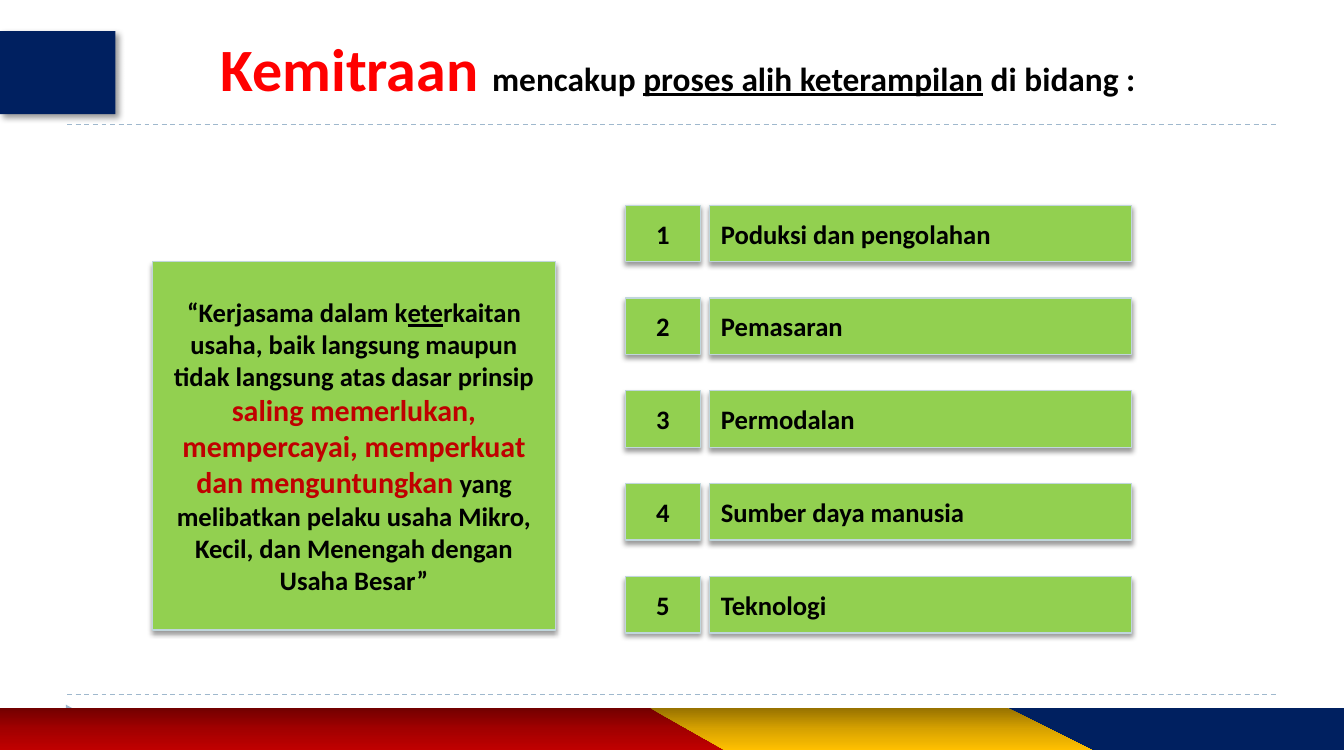
from lxml.etree import SubElement
from pptx import Presentation
from pptx.dml.color import RGBColor
from pptx.enum.dml import MSO_LINE_DASH_STYLE as Dash
from pptx.enum.shapes import MSO_CONNECTOR as Connector, MSO_SHAPE as Shape
from pptx.enum.text import MSO_ANCHOR as Anchor, MSO_AUTO_SIZE as AutoSize, PP_ALIGN as Align
from pptx.oxml.ns import qn
from pptx.util import Pt

WIDTH, HEIGHT = 806.4, 450
NAVY, GREEN, DARK_RED = "002060", "92D050", "C00000"
RED_BLEND = [(0, "720000"), (50, "A20000"), (100, "C00000")]
GOLD_BLEND = [(0, "977200"), (50, "D7A200"), (100, "FFC000")]
SKILLS = ["Poduksi dan pengolahan", "Pemasaran", "Permodalan",
          "Sumber daya manusia", "Teknologi"]


def color(value):
    return RGBColor.from_string(value)


def add_span(para, text, size=16, ink="000000", bold=True, underline=False):
    span = para.add_run()
    span.text = text
    span.font.name = "Calibri"
    span.font.size = Pt(size)
    span.font.bold = bold
    span.font.underline = underline
    span.font.color.rgb = color(ink)


def add_shadow(shape, blur, distance, angle):
    shape.shadow.inherit = False
    effects = shape.element.spPr.find(qn("a:effectLst"))
    shadow = SubElement(effects, qn("a:outerShdw"), blurRad=str(Pt(blur)),
                        dist=str(Pt(distance)), dir=str(angle * 60000),
                        algn="ctr", rotWithShape="0")
    black = SubElement(shadow, qn("a:srgbClr"), val="000000")
    SubElement(black, qn("a:alpha"), val="40000")


def paint(shape, fill, outline=None):
    shape.shadow.inherit = False
    shape.fill.solid()
    shape.fill.fore_color.rgb = color(fill)
    if outline:
        shape.line.color.rgb = color(outline)
        shape.line.width = Pt(0.75)
    else:
        shape.line.fill.background()


def paint_blend(shape, stops):
    shape.fill.gradient()
    shape.fill.gradient_angle = 270
    stop_list = shape.element.spPr.find(qn("a:gradFill")).find(qn("a:gsLst"))
    for stop in list(stop_list):
        stop_list.remove(stop)
    for position, value in stops:
        stop = SubElement(stop_list, qn("a:gs"), pos=str(position * 1000))
        SubElement(stop, qn("a:srgbClr"), val=value)


def add_box(page, left, top, width, height, spans, align=Align.LEFT):
    box = page.shapes.add_shape(Shape.RECTANGLE, Pt(left), Pt(top), Pt(width), Pt(height))
    paint(box, GREEN, "C0D6DC")
    add_shadow(box, 3, 2, 90)
    frame = box.text_frame
    frame.word_wrap = True
    frame.vertical_anchor = Anchor.MIDDLE
    para = frame.paragraphs[0]
    para.alignment = align
    for text, options in spans:
        add_span(para, text, **options)


def add_rule(page, left, top, width):
    rule = page.shapes.add_connector(Connector.STRAIGHT, Pt(left), Pt(top),
                                     Pt(left + width), Pt(top))
    rule.line.color.rgb = color("9FB8CD")
    rule.line.width = Pt(0.75)
    rule.line.dash_style = Dash.DASH
    SubElement(rule.element.spPr, qn("a:effectLst"))


def add_band(page, points):
    corners = [(Pt(x), Pt(y)) for x, y in points]
    builder = page.shapes.build_freeform(*corners[0])
    builder.add_line_segments(corners[1:], close=True)
    band = builder.convert_to_shape()
    paint(band, NAVY)
    return band


def add_footer(page, top, height):
    bottom = top + height
    marker = page.shapes.add_shape(Shape.ISOSCELES_TRIANGLE, Pt(39), Pt(top - 1.5),
                                   Pt(12), Pt(11))
    marker.rotation = 90
    paint(marker, "9FB8CD")
    add_band(page, [(604.8, top), (WIDTH, top), (WIDTH, bottom), (655.2, bottom)])
    red = add_band(page, [(0, top), (393.1, top), (434.9, bottom), (0, bottom)])
    paint_blend(red, RED_BLEND)
    gold = add_band(page, [(390.2, top), (604.8, top), (655.2, bottom), (434.9, bottom)])
    paint_blend(gold, GOLD_BLEND)


def add_header(page, left, top, width, height):
    tab = page.shapes.add_shape(Shape.RECTANGLE, 0, Pt(top + 3.6), Pt(69.2), Pt(49.8))
    paint(tab, NAVY)
    add_shadow(tab, 4, 3, 45)
    title = page.shapes.title
    title.left, title.top = Pt(left), Pt(top)
    title.width, title.height = Pt(width), Pt(height)
    frame = title.text_frame
    frame.word_wrap = True
    frame.auto_size = AutoSize.NONE
    frame.vertical_anchor = Anchor.TOP
    para = frame.paragraphs[0]
    para.alignment = Align.LEFT
    add_span(para, "Kemitraan ", size=36, ink="FF0000")
    add_span(para, "mencakup ", size=20)
    add_span(para, "proses alih keterampilan", size=20, underline=True)
    add_span(para, " di bidang :", size=20)


def add_definition(page, left, top, width, height):
    spans = [
        ("“Kerjasama dalam k", {}),
        ("ete", {"underline": True}),
        ("rkaitan usaha, baik langsung maupun tidak langsung atas dasar prinsip ", {}),
        ("saling memerlukan, mempercayai, memperkuat dan menguntungkan",
         {"size": 18, "ink": DARK_RED}),
        (" yang melibatkan pelaku usaha Mikro, Kecil, dan Menengah dengan Usaha Besar”", {}),
    ]
    add_box(page, left, top, width, height, spans, Align.CENTER)


def add_skills(page, left, top, width, height):
    row_height, number_width, gap = 33.9, 45.2, 5.2
    pitch = (height - row_height) / (len(SKILLS) - 1)
    label_offset = number_width + gap
    for index, skill in enumerate(SKILLS):
        row_top = top + index * pitch
        add_box(page, left, row_top, number_width, row_height,
                [(str(index + 1), {})], Align.CENTER)
        add_box(page, left + label_offset, row_top, width - label_offset, row_height,
                [(skill, {})])


def main():
    deck = Presentation()
    deck.slide_width, deck.slide_height = Pt(WIDTH), Pt(HEIGHT)
    page = deck.slides.add_slide(deck.slide_layouts[5])
    for rule_top in (416.6, 74.9):
        add_rule(page, 40.3, rule_top, 725.8)
    add_footer(page, 424.8, 25.2)
    add_header(page, 125.3, 15.1, 573.8, 51.1)
    add_definition(page, 91.4, 157, 242, 221)
    add_skills(page, 375.1, 123.2, 304, 256.6)
    deck.save("out.pptx")


if __name__ == "__main__":
    main()
